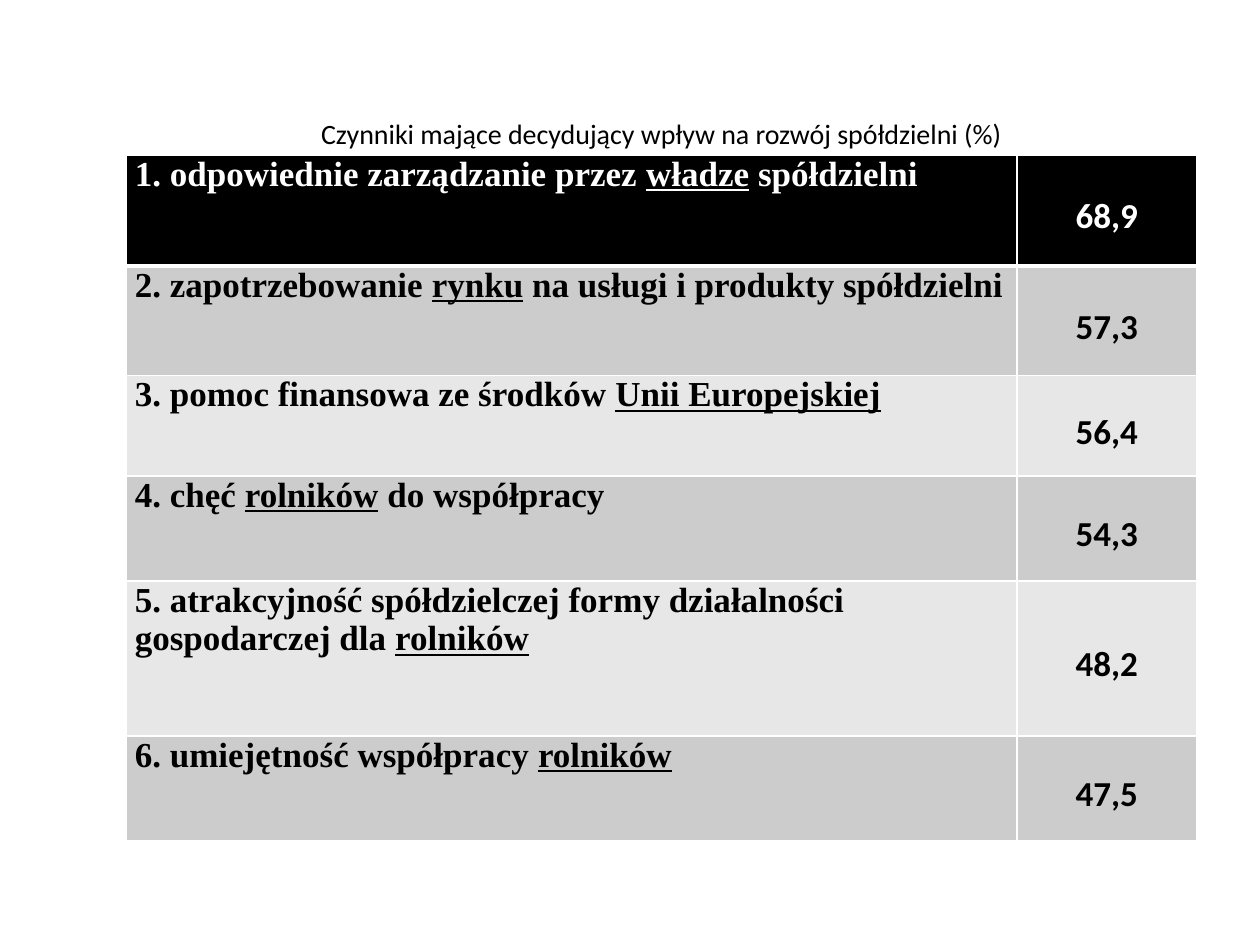
from dataclasses import dataclass

from lxml.etree import SubElement
from pptx import Presentation
from pptx.dml.color import RGBColor
from pptx.enum.text import MSO_ANCHOR as Anchor, PP_ALIGN as Align
from pptx.oxml.ns import qn
from pptx.util import Inches, Pt


@dataclass(frozen=True)
class Theme:
    title_font: str = "Calibri"
    label_font: str = "Times New Roman"
    title_size: int = 16
    table_size: int = 20
    dark: str = "000000"
    light: str = "FFFFFF"
    bands: tuple = ("E7E7E7", "CCCCCC")
    thin_line: int = 1
    thick_line: int = 3


TITLE = "Czynniki mające decydujący wpływ na rozwój spółdzielni (%)"

# Text before the key word, key word, text after, value, row height, space before
FACTORS = [
    ("1. odpowiednie zarządzanie przez ", "władze", " spółdzielni", "68,9", 0.88, 6),
    ("2. zapotrzebowanie ", "rynku", " na usługi i produkty spółdzielni", "57,3", 0.87, 6),
    ("3. pomoc finansowa ze środków ", "Unii Europejskiej", "", "56,4", 0.8, 6),
    ("4. chęć ", "rolników", " do współpracy", "54,3", 0.83, 12),
    ("5. atrakcyjność spółdzielczej formy działalności gospodarczej dla ",
     "rolników", "", "48,2", 1.23, 6),
    ("6. umiejętność współpracy ", "rolników", "", "47,5", 0.83, 12),
]
COLUMN_WIDTHS = (7.07, 1.43)


class SlideBuilder:
    def __init__(self, slide, theme):
        self.slide = slide
        self.theme = theme

    def style(self, paragraph, font_name, size, color, bold=False):
        font = paragraph.font
        font.name, font.size, font.bold = font_name, Pt(size), bold
        font.color.rgb = RGBColor.from_string(color)

    def add_title(self, text, left, top, width, height):
        title = self.slide.shapes.title
        title.left, title.top = Inches(left), Inches(top)
        title.width, title.height = Inches(width), Inches(height)
        frame = title.text_frame
        frame.text = text
        frame.vertical_anchor = Anchor.MIDDLE
        paragraph = frame.paragraphs[0]
        paragraph.alignment = Align.CENTER
        self.style(paragraph, self.theme.title_font, self.theme.title_size, self.theme.dark)

    def set_borders(self, cell, row_index):
        """Draw thin borders, with a thick one between the first two rows."""
        properties = cell._tc.get_or_add_tcPr()
        thick_side = {0: "lnB", 1: "lnT"}.get(row_index)
        for side in ("lnL", "lnR", "lnT", "lnB"):
            width = self.theme.thick_line if side == thick_side else self.theme.thin_line
            line = SubElement(properties, qn(f"a:{side}"), w=str(Pt(width)))
            fill = SubElement(line, qn("a:solidFill"))
            SubElement(fill, qn("a:srgbClr"), val=self.theme.light)

    def format_cell(self, cell, row_index):
        self.set_borders(cell, row_index)
        cell.margin_left = cell.margin_right = Inches(0.07)
        cell.margin_top = cell.margin_bottom = 0
        color = self.theme.bands[row_index % 2] if row_index else self.theme.dark
        cell.fill.solid()
        cell.fill.fore_color.rgb = RGBColor.from_string(color)

    def add_factor_table(self, factors, column_widths, left, top):
        theme = self.theme
        height = sum(factor[4] for factor in factors)
        table = self.slide.shapes.add_table(
            len(factors), len(column_widths), Inches(left), Inches(top),
            Inches(sum(column_widths)), Inches(height)).table
        for column, width in zip(table.columns, column_widths):
            column.width = Inches(width)

        for index, (before, key_word, after, value, row_height, space) in enumerate(factors):
            table.rows[index].height = Inches(row_height)
            label_cell, value_cell = table.cell(index, 0), table.cell(index, 1)
            for cell in (label_cell, value_cell):
                self.format_cell(cell, index)
            color = theme.dark if index else theme.light

            label = label_cell.text_frame.paragraphs[0]
            label.space_before = Pt(space)
            self.style(label, theme.label_font, theme.table_size, color, bold=True)
            for text in filter(None, (before, key_word, after)):
                run = label.add_run()
                run.text = text
                if text == key_word:
                    run.font.underline = True

            value_cell.text = value
            value_cell.vertical_anchor = Anchor.MIDDLE
            number = value_cell.text_frame.paragraphs[0]
            number.alignment = Align.CENTER
            number.line_spacing = 1.3
            self.style(number, theme.title_font, theme.table_size, color, bold=True)


def main():
    presentation = Presentation()
    presentation.slide_width, presentation.slide_height = Inches(10), Inches(7.5)
    title_only = presentation.slide_layouts[5]
    builder = SlideBuilder(presentation.slides.add_slide(title_only), Theme())
    builder.add_title(TITLE, 1, 0.56, 8.5, 0.99)
    builder.add_factor_table(FACTORS, COLUMN_WIDTHS, 1, 1.23)
    presentation.save("out.pptx")


if __name__ == "__main__":
    main()
